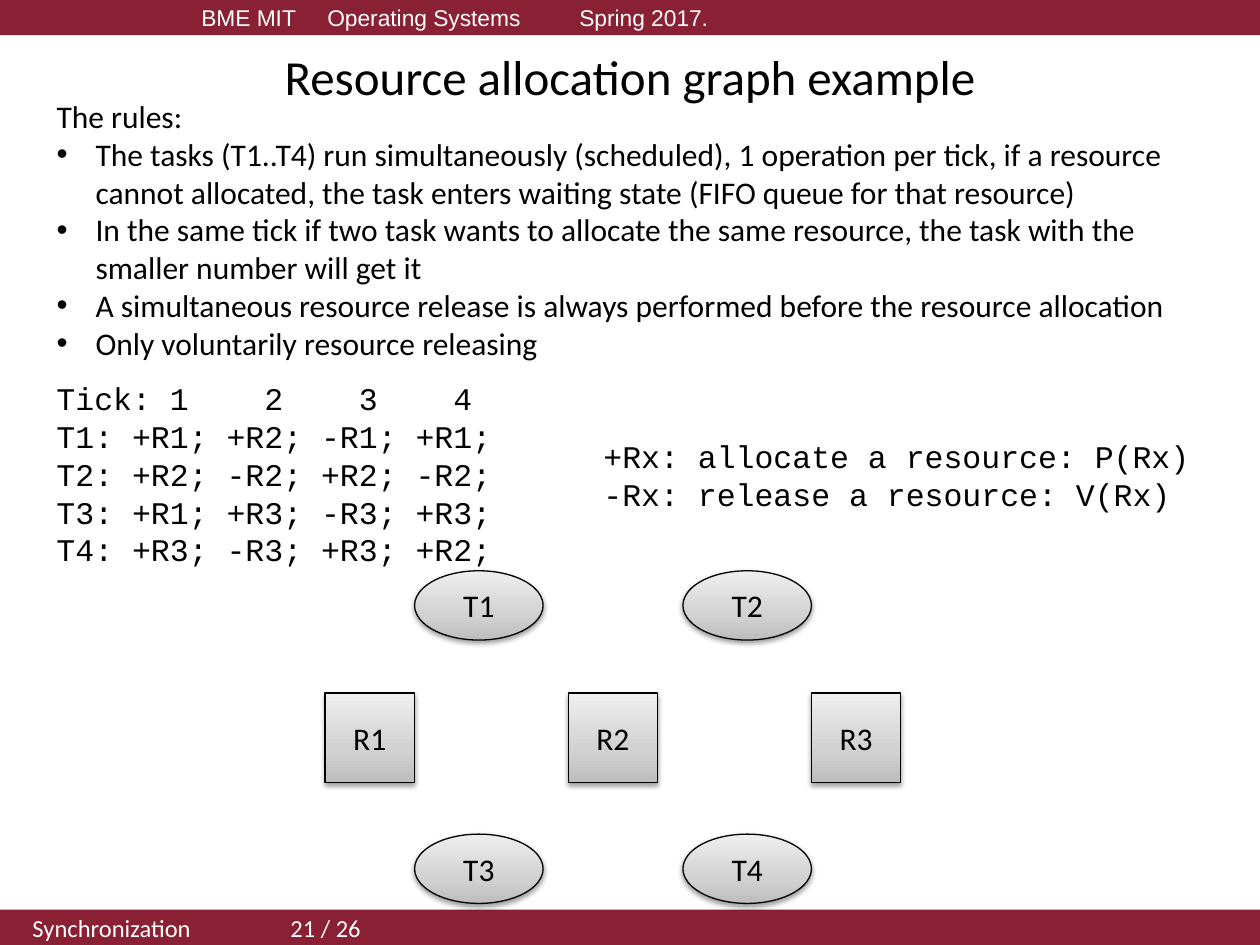
from lxml import etree
from pptx import Presentation
from pptx.dml.color import RGBColor
from pptx.enum import shapes, text
from pptx.oxml import parse_xml
from pptx.oxml.ns import qn
from pptx.util import Inches, Pt

A = 'xmlns:a="http://schemas.openxmlformats.org/drawingml/2006/main"'
BAR_RED, BLACK, WHITE = "892034", "000000", "FFFFFF"
NODE_STOPS = [(0, "BDBDBD"), (35, "D1D1D1"), (100, "EEEEEE")]

TITLE = "Resource allocation graph example"
HEADER = [("BME MIT\tOperating Systems\tSpring 2017.", 13, "Arial")]
FOOTER = [("Synchronization", 14, "Calibri"), ("\t\t ", 13, "Noto Sans"),
          ("21 / 26", 14, "Calibri")]
RULES_HEADING = "The rules:"
RULES = [
    "The tasks (T1..T4) run simultaneously (scheduled), 1 operation per tick, "
    "if a resource cannot allocated, the task enters waiting state "
    "(FIFO queue for that resource)",
    "In the same tick if two task wants to allocate the same resource, "
    "the task with the smaller number will get it",
    "A simultaneous resource release is always performed before the resource allocation",
    "Only voluntarily resource releasing",
]
SCHEDULE = [
    "Tick: 1    2    3    4",
    "T1: +R1; +R2; -R1; +R1;",
    "T2: +R2; -R2; +R2; -R2;",
    "T3: +R1; +R3; -R3; +R3;",
    "T4: +R3; -R3; +R3; +R2;",
]
LEGEND = ["+Rx: allocate a resource: P(Rx)", "-Rx: release a resource: V(Rx)"]
TASKS = [["T1", "T2"], ["T3", "T4"]]
RESOURCES = ["R1", "R2", "R3"]


def color(value):
    return RGBColor.from_string(value)


def write(paragraph, content, size=18, font="Calibri", ink=BLACK, align=None,
          margin=0, bullet=None):
    """Append a run; a bullet hangs to the left of the margin."""
    if align is not None:
        paragraph.alignment = align
    if margin:
        props = paragraph._p.get_or_add_pPr()
        props.set("marL", str(Inches(margin)))
        props.set("indent", str(-Inches(margin) if bullet else 0))
        if bullet and props.find(qn("a:buChar")) is None:
            etree.SubElement(props, qn("a:buFont")).set("typeface", "Arial")
            etree.SubElement(props, qn("a:buChar")).set("char", bullet)
    run = paragraph.add_run()
    run.text = content
    run.font.size, run.font.name = Pt(size), font
    run.font.color.rgb = color(ink)


def add_lines(slide, box, lines, wrap=False, **style):
    """Add a text box with one paragraph per (text, extra format) line."""
    frame = slide.shapes.add_textbox(*map(Inches, box)).text_frame
    frame.word_wrap = wrap
    for i, (content, extra) in enumerate(lines):
        paragraph = frame.add_paragraph() if i else frame.paragraphs[0]
        write(paragraph, content, **style, **extra)


def add_bar(slide, top, parts, margin):
    bar = slide.shapes.add_shape(shapes.MSO_SHAPE.RECTANGLE,
                                 *map(Inches, (0, top, 10, 0.28)))
    bar.shadow.inherit = False
    bar.fill.solid()
    bar.fill.fore_color.rgb = color(BAR_RED)
    bar.line.fill.background()
    bar.text_frame.vertical_anchor = text.MSO_ANCHOR.MIDDLE
    for content, size, font in parts:
        write(bar.text_frame.paragraphs[0], content, size, font, WHITE,
              text.PP_ALIGN.LEFT, margin)


def add_node(slide, label, kind, box):
    """Add a graph node with a grey gradient and a soft shadow below."""
    node = slide.shapes.add_shape(kind, *map(Inches, box))
    node.line.color.rgb = color(BLACK)
    node.line.width = Pt(0.75)
    stops = "".join(f'<a:gs pos="{pos * 1000}"><a:srgbClr val="{value}"/></a:gs>'
                    for pos, value in NODE_STOPS)
    node._element.spPr.find(qn("a:prstGeom")).addnext(parse_xml(
        f'<a:gradFill {A} rotWithShape="1"><a:gsLst>{stops}</a:gsLst>'
        '<a:lin ang="16200000" scaled="0"/></a:gradFill>'))
    node._element.spPr.append(parse_xml(
        f'<a:effectLst {A}><a:outerShdw blurRad="{Pt(3.1)}" dist="{Pt(1.6)}" '
        f'dir="5400000" rotWithShape="0"><a:srgbClr val="{BLACK}">'
        '<a:alpha val="38000"/></a:srgbClr></a:outerShdw></a:effectLst>'))
    node.text_frame.vertical_anchor = text.MSO_ANCHOR.MIDDLE
    write(node.text_frame.paragraphs[0], label, align=text.PP_ALIGN.CENTER)


def main():
    prs = Presentation()
    prs.slide_width, prs.slide_height = Inches(10), Inches(7.5)
    slide = prs.slides.add_slide(prs.slide_layouts[5])

    title = slide.shapes.title
    title.left, title.top, title.width, title.height = map(Inches, (0.5, 0.3, 9, 0.61))
    title.text_frame.vertical_anchor = text.MSO_ANCHOR.MIDDLE
    write(title.text_frame.paragraphs[0], TITLE, size=28, align=text.PP_ALIGN.CENTER)

    add_bar(slide, 0, HEADER, 1.5)
    add_bar(slide, 7.22, FOOTER, 0.16)

    for row, labels in enumerate(TASKS):
        for col, label in enumerate(labels):
            add_node(slide, label, shapes.MSO_SHAPE.OVAL,
                     (3.29 + 2.13 * col, 4.53 + 2.09 * row, 1.02, 0.55))
    for col, label in enumerate(RESOURCES):
        add_node(slide, label, shapes.MSO_SHAPE.RECTANGLE,
                 (2.58 + 1.93 * col, 5.5, 0.71, 0.71))

    for box, lines in [((0.35, 2.96, 3.67, 1.62), SCHEDULE),
                       ((4.69, 3.42, 4.88, 0.71), LEGEND)]:
        add_lines(slide, box, [(line, {}) for line in lines], font="Courier New")
    bulleted = {"margin": 0.31, "bullet": "•"}
    add_lines(slide, (0.35, 0.72, 9.29, 2.22),
              [(RULES_HEADING, {})] + [(rule, bulleted) for rule in RULES], wrap=True)

    prs.save("out.pptx")


if __name__ == "__main__":
    main()
